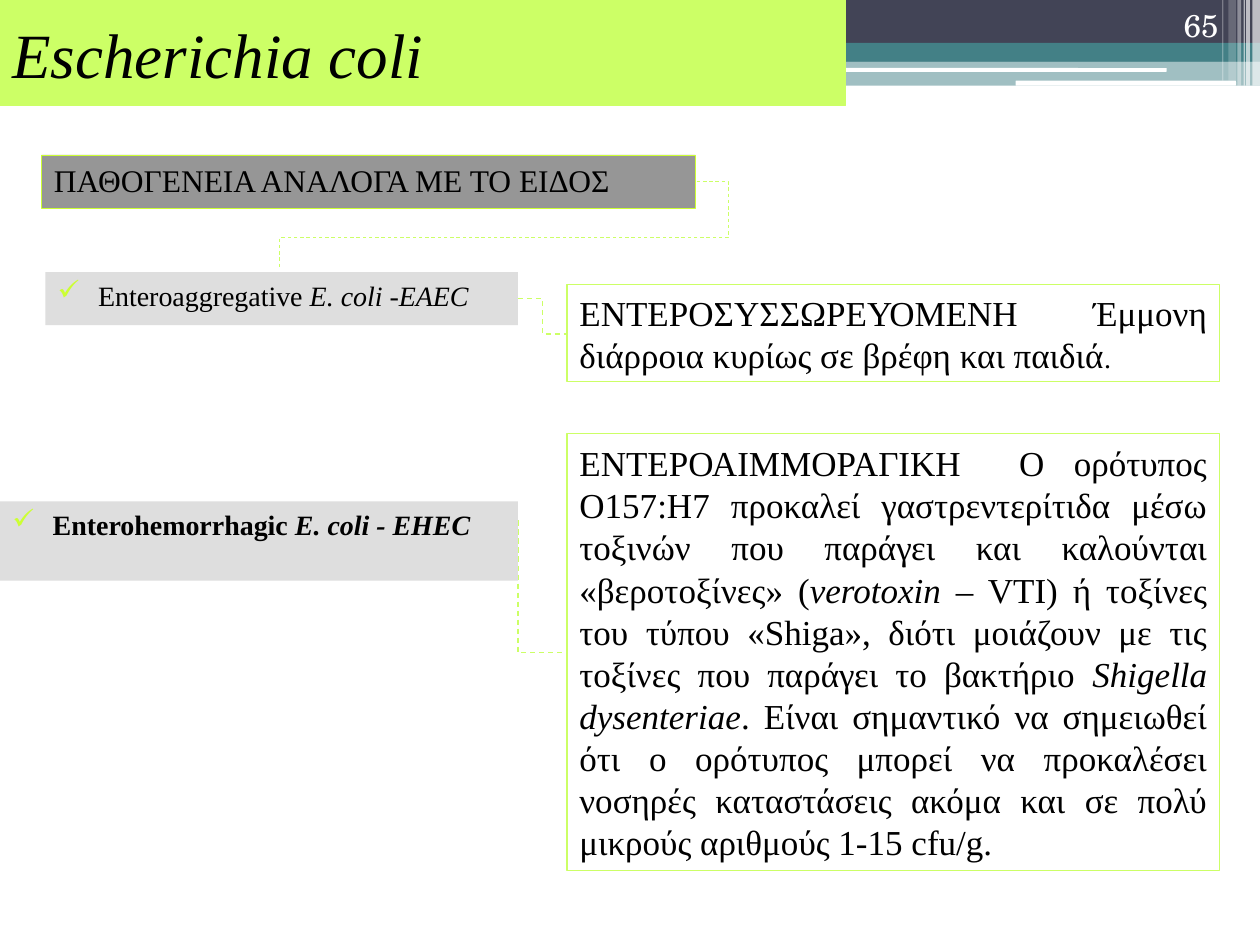
from lxml import etree
from pptx import Presentation
from pptx.dml.color import RGBColor
from pptx.enum.dml import MSO_LINE
from pptx.enum.shapes import MSO_CONNECTOR, MSO_SHAPE as SHAPE
from pptx.enum.text import MSO_ANCHOR as ANCHOR, PP_ALIGN as ALIGN
from pptx.oxml.ns import qn
from pptx.util import Inches, Pt

LIME, BULLET_LIME = "CCFF66", "CCFF33"
NAVY, TEAL, WHITE, GREY = "424456", "438086", "FFFFFF", "DEDEDE"
rgb = RGBColor.from_string

prs = Presentation()
prs.slide_width, prs.slide_height = Inches(10), Inches(7.5)
slide = prs.slides.add_slide(prs.slide_layouts[6])


def add_box(x, y, w, h, fill=None, alpha=100, line=None, line_width=0.75, kind=SHAPE.RECTANGLE):
    box = slide.shapes.add_shape(kind, Inches(x), Inches(y), Inches(w), Inches(h))
    box.shadow.inherit = False
    if fill:
        box.fill.solid()
        box.fill.fore_color.rgb = rgb(fill)
        if alpha < 100:
            color = box.fill._xPr.find(".//" + qn("a:srgbClr"))
            etree.SubElement(color, qn("a:alpha"), val=str(alpha * 1000))
    else:
        box.fill.background()
    if line:
        box.line.color.rgb = rgb(line)
        box.line.width = Pt(line_width)
    else:
        box.line.fill.background()
    return box


def write(box, *runs, size=20, font="Times New Roman", color="000000", bold=False,
          align=ALIGN.LEFT, anchor=ANCHOR.TOP, indent=0, bullet=None):
    """Each run is (text, italic) or (text, italic, own size)."""
    frame = box.text_frame
    frame.word_wrap = True
    frame.vertical_anchor = anchor
    paragraph = frame.paragraphs[0]
    paragraph.alignment = align
    for text, italic, *own_size in runs:
        run = paragraph.add_run()
        run.text = text
        run.font.name = font
        run.font.size = Pt(own_size[0] if own_size else size)
        run.font.italic, run.font.bold = italic, bold
        run.font.color.rgb = rgb(color)
    if indent:
        props = paragraph._p.get_or_add_pPr()
        props.set("marL", str(Inches(indent)))
        props.set("indent", str(-Inches(indent)))
        if bullet:
            bullet_color = etree.SubElement(props, qn("a:buClr"))
            etree.SubElement(bullet_color, qn("a:srgbClr"), val=BULLET_LIME)
            etree.SubElement(props, qn("a:buChar"), char=bullet)


# Header bands
for x, y, w, h, fill, alpha in [
    (0, 0.4, 10, 0.09, TEAL, 50),
    (0, 0, 10, 0.34, NAVY, 100),
    (0, 0.34, 10, 0.1, TEAL, 100),
    (5.92, 0.39, 4.08, 0.1, TEAL, 100),
    (5.92, 0.48, 4.08, 0.2, TEAL, 50),
]:
    add_box(x, y, w, h, fill, alpha)
for x, y, w, h in [(5.91, 0.54, 3.35, 0.03), (8.06, 0.64, 1.75, 0.04)]:
    add_box(x, y, w, h, WHITE, kind=SHAPE.ROUNDED_RECTANGLE)

# Pale stripes at the right edge
for x, w, h, alpha in [
    (9.94, 0.06, 0.68, 65), (9.89, 0.03, 0.68, 65), (9.87, 0.01, 0.68, 60),
    (9.82, 0.03, 0.68, 40), (9.75, 0.06, 0.64, 20), (9.7, 0.01, 0.64, 30),
]:
    add_box(x, 0, w, h, WHITE, alpha)

# Title and section heading
title = add_box(0, 0, 6.71, 0.84, LIME, line=LIME)
write(title, ("Escherichia coli", True), size=36, anchor=ANCHOR.MIDDLE)
heading = add_box(0.33, 1.23, 5.19, 0.42, "969696", line=BULLET_LIME, line_width=0.25)
write(heading, ("ΠΑΘΟΓΕΝΕΙΑ ΑΝΑΛΟΓΑ ΜΕ ΤΟ ΕΙΔΟΣ", False), size=18, indent=0.38)

# Dashed elbows: heading to EAEC, EAEC and EHEC to their descriptions
for start, end, preset, adjusts, turn, width in [
    ((5.53, 1.44), (2.22, 2.12), "bentConnector4", (-7600, 65600), 0, 0.5),
    ((4.11, 2.37), (4.5, 2.65), "bentConnector3", (50000,), 0, 0.75),
    ((4.83, 4.46), (3.78, 4.85), "bentConnector2", (), 270, 0.75),
]:
    elbow = slide.shapes.add_connector(
        MSO_CONNECTOR.ELBOW, *(Inches(value) for value in start + end))
    elbow.line.color.rgb = rgb(LIME)
    elbow.line.width = Pt(width)
    elbow.line.dash_style = MSO_LINE.DASH
    props = elbow._element.spPr
    etree.SubElement(props, qn("a:effectLst"))
    if turn:
        props.find(qn("a:xfrm")).set("rot", str(turn * 60000))
    geometry = props.find(qn("a:prstGeom"))
    geometry.set("prst", preset)
    for number, value in enumerate(adjusts, 1):
        etree.SubElement(geometry.find(qn("a:avLst")), qn("a:gd"),
                         name=f"adj{number}", fmla=f"val {value}")

# Strain labels
for x, y, w, h, strain, short_name, bold in [
    (0.36, 2.16, 3.75, 0.42, "Enteroaggregative", " E. coli -EAEC", False),
    (0, 3.98, 4.11, 0.63, "Enterohemorrhagic", " E. coli - EΗEC", True),
]:
    write(add_box(x, y, w, h, GREY), (strain, False), (short_name, True),
          size=16, bold=bold, indent=0.32, bullet="✓")

# Strain descriptions
for y, h, runs in [
    (2.26, 0.77, [
        ("ΕΝΤΕΡΟΣΥΣΣΩΡΕΥΟΜΕΝΗ Έμμονη διάρροια κυρίως σε βρέφη και παιδιά", False),
        (".", False, 16),
    ]),
    (3.44, 3.47, [
        ("ΕΝΤΕΡΟΑΙΜΜΟΡΑΓΙΚΗ  Ο ορότυπος Ο157:H7 προκαλεί γαστρεντερίτιδα μέσω "
         "τοξινών που παράγει και καλούνται «βεροτοξίνες» (", False),
        ("verotoxin", True),
        (" – VTI) ή τοξίνες του τύπου «Shiga», διότι μοιάζουν με τις τοξίνες "
         "που παράγει το βακτήριο ", False),
        ("Shigella dysenteriae", True),
        (". Είναι σημαντικό να σημειωθεί ότι ο ορότυπος μπορεί να προκαλέσει "
         "νοσηρές καταστάσεις ακόμα και σε πολύ μικρούς αριθμούς 1-15 cfu/g.", False),
    ]),
]:
    write(add_box(4.5, y, 5.18, h, line=LIME), *runs,
          align=ALIGN.JUSTIFY, anchor=ANCHOR.MIDDLE)

# Slide number
page_number = slide.shapes.add_textbox(Inches(8.94), Inches(0), Inches(0.83), Inches(0.4))
write(page_number, ("65", False), size=18, font="TeX Gyre Schola", color=WHITE,
      align=ALIGN.RIGHT, anchor=ANCHOR.BOTTOM)

prs.save("out.pptx")
